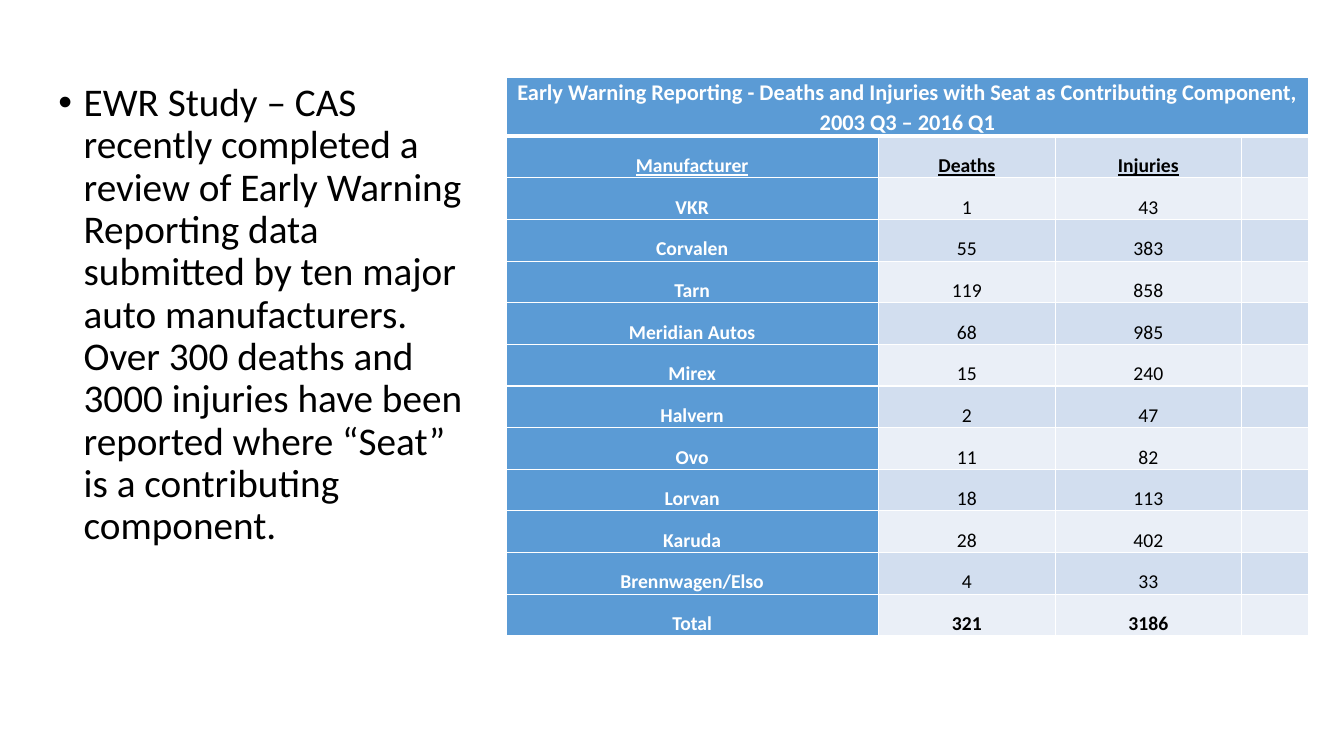
import dataclasses

import pptx
import pptx.dml.color
import pptx.enum.text
import pptx.oxml
import pptx.oxml.ns
import pptx.util
from pptx.util import Inches

BLUE, BAND_DARK, BAND_LIGHT = "5B9BD5", "D2DEEF", "EAEFF7"
WHITE, BLACK = "FFFFFF", "000000"
COLUMN_WIDTHS = (3.69, 1.76, 1.84, 0.67)
TITLE_HEIGHT, ROWS_HEIGHT = 0.5, 4.96
CENTER = pptx.enum.text.PP_ALIGN.CENTER

STUDY = (
    "EWR Study – CAS recently completed a review of Early Warning Reporting data "
    "submitted by ten major auto manufacturers. Over 300 deaths and 3000 injuries "
    "have been reported where “Seat” is a contributing component."
)
TABLE_TITLE = (
    "Early Warning Reporting - Deaths and Injuries with Seat as "
    "Contributing Component, 2003 Q3 – 2016 Q1"
)


@dataclasses.dataclass(frozen=True)
class Record:
    manufacturer: str
    deaths: str
    injuries: str
    bold: bool = False
    underline: bool = False


RECORDS = (
    Record("Manufacturer", "Deaths", "Injuries", bold=True, underline=True),
    Record("VKR", "1", "43"),
    Record("Corvalen", "55", "383"),
    Record("Tarn", "119", "858"),
    Record("Meridian Autos", "68", "985"),
    Record("Mirex", "15", "240"),
    Record("Halvern", "2", "47"),
    Record("Ovo", "11", "82"),
    Record("Lorvan", "18", "113"),
    Record("Karuda", "28", "402"),
    Record("Brennwagen/Elso", "4", "33"),
    Record("Total", "321", "3186", bold=True),
)


def rgb(color: str) -> pptx.dml.color.RGBColor:
    return pptx.dml.color.RGBColor.from_string(color)


def write(frame, text: str, *, size: float, color: str = BLACK, bold: bool = False,
          underline: bool = False, align=None, spacing: float = 1.07,
          before: float = 0) -> None:
    paragraph = frame.paragraphs[0]
    paragraph.alignment = align
    paragraph.line_spacing = spacing
    paragraph.space_before = pptx.util.Pt(before)
    run = paragraph.add_run()
    run.text = text
    run.font.name = "Calibri"
    run.font.size = pptx.util.Pt(size)
    run.font.bold = bold
    run.font.underline = underline
    run.font.color.rgb = rgb(color)


def style_cell(cell, fill: str, top: float = 1, bottom: float = 1) -> None:
    """Give the cell white borders (widths in points), a fill and its text layout."""
    properties = cell._tc.get_or_add_tcPr()
    for side, width in (("L", 1), ("R", 1), ("T", top), ("B", bottom)):
        properties.append(pptx.oxml.parse_xml(
            f'<a:ln{side} {pptx.oxml.ns.nsdecls("a")} w="{pptx.util.Pt(width)}">'
            f'<a:solidFill><a:srgbClr val="{WHITE}"/></a:solidFill></a:ln{side}>'))
    cell.fill.solid()
    cell.fill.fore_color.rgb = rgb(fill)
    cell.vertical_anchor = pptx.enum.text.MSO_ANCHOR.BOTTOM
    cell.margin_left = cell.margin_right = Inches(0.06)
    cell.margin_top = cell.margin_bottom = 0


def add_study(slide) -> None:
    study = slide.placeholders[1]
    study.left, study.top = Inches(0.48), Inches(0.77)
    study.width, study.height = Inches(4.33), Inches(5.98)
    frame = study.text_frame
    frame.auto_size = pptx.enum.text.MSO_AUTO_SIZE.NONE
    write(frame, STUDY, size=28, spacing=0.9, before=10)
    indents = frame.paragraphs[0]._p.get_or_add_pPr()
    indents.set("marL", str(Inches(0.25)))
    indents.set("indent", str(Inches(-0.25)))


def add_report(slide) -> None:
    report = slide.shapes.add_table(
        len(RECORDS) + 1, len(COLUMN_WIDTHS), Inches(5.02), Inches(0.77),
        Inches(sum(COLUMN_WIDTHS)), Inches(TITLE_HEIGHT + ROWS_HEIGHT)).table
    for column, width in zip(report.columns, COLUMN_WIDTHS):
        column.width = Inches(width)
    for row in report.rows:
        row.height = Inches(ROWS_HEIGHT / len(RECORDS))
    report.rows[0].height = Inches(TITLE_HEIGHT)

    for cell in report.rows[0].cells:
        style_cell(cell, BLUE, bottom=3)
    title = report.cell(0, 0)
    title.merge(report.cell(0, len(COLUMN_WIDTHS) - 1))
    write(title.text_frame, TABLE_TITLE, size=16, color=WHITE, bold=True, align=CENTER)

    for index, record in enumerate(RECORDS, start=1):
        band = BAND_DARK if index % 2 else BAND_LIGHT
        texts = (record.manufacturer, record.deaths, record.injuries, "")
        for column, text in enumerate(texts):
            is_name = column == 0
            cell = report.cell(index, column)
            style_cell(cell, BLUE if is_name else band, top=3 if index == 1 else 1)
            if text:
                write(cell.text_frame, text, size=14, align=CENTER,
                      color=WHITE if is_name else BLACK,
                      bold=is_name or record.bold, underline=record.underline)


def main() -> None:
    presentation = pptx.Presentation()
    presentation.slide_width = Inches(13.33)
    presentation.slide_height = Inches(7.5)
    slide = presentation.slides.add_slide(presentation.slide_layouts[1])
    unused_title = slide.shapes.title.element
    unused_title.getparent().remove(unused_title)
    add_study(slide)
    add_report(slide)
    presentation.save("out.pptx")


if __name__ == "__main__":
    main()
